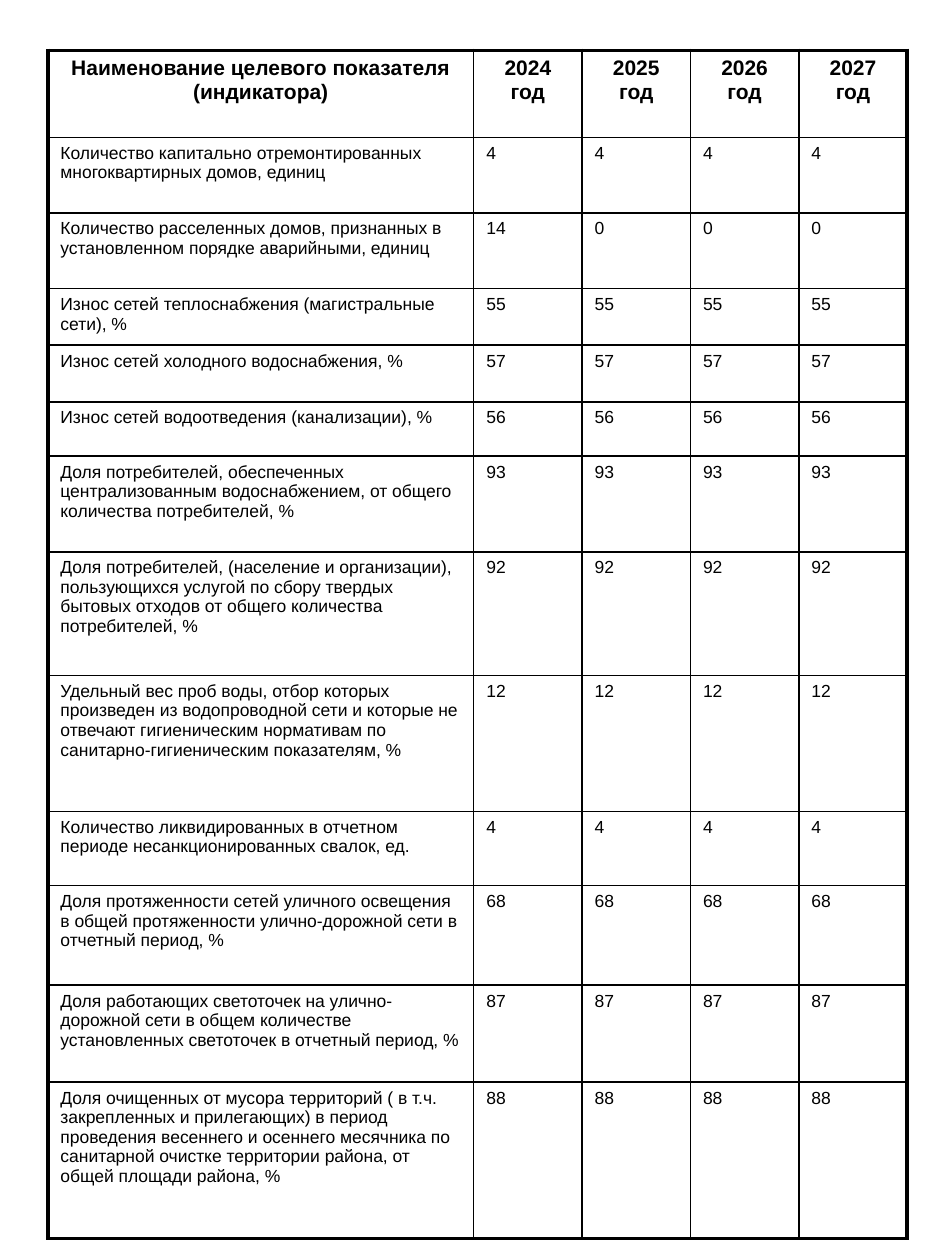
import pptx
import pptx.dml.color
import pptx.enum.text
import pptx.oxml.ns
import pptx.util
from lxml import etree

Inches = pptx.util.Inches
Pt = pptx.util.Pt
qn = pptx.oxml.ns.qn

YEARS = [2024, 2025, 2026, 2027]
HEADING = ["Наименование целевого показателя (индикатора)"] + [f"{year} год" for year in YEARS]
HEADING_HEIGHT = 0.69

INDICATORS = [
    (0.6, "Количество капитально отремонтированных многоквартирных домов, единиц", [4] * 4),
    (0.6, "Количество расселенных домов, признанных в установленном порядке аварийными, единиц", [14, 0, 0, 0]),
    (0.45, "Износ сетей теплоснабжения (магистральные сети), %", [55] * 4),
    (0.45, "Износ сетей холодного водоснабжения, %", [57] * 4),
    (0.43, "Износ сетей водоотведения (канализации), %", [56] * 4),
    (0.76, "Доля потребителей, обеспеченных централизованным водоснабжением, от общего количества потребителей, %", [93] * 4),
    (0.98, "Доля потребителей, (население и организации), пользующихся услугой по сбору твердых бытовых отходов от общего количества потребителей, %", [92] * 4),
    (1.08, "Удельный вес проб воды, отбор которых произведен из водопроводной сети и которые не отвечают гигиеническим нормативам по санитарно-гигиеническим показателям, %", [12] * 4),
    (0.59, "Количество ликвидированных в отчетном периоде несанкционированных свалок, ед.", [4] * 4),
    (0.79, "Доля протяженности сетей уличного освещения в общей протяженности улично-дорожной сети в отчетный период, %", [68] * 4),
    (0.77, "Доля работающих светоточек на улично-дорожной сети в общем количестве установленных светоточек в отчетный период, %", [87] * 4),
    (1.24, "Доля очищенных от мусора территорий ( в т.ч. закрепленных и прилегающих) в период проведения весеннего и осеннего месячника по санитарной очистке территории района, от общей площади района, %", [88] * 4),
]


def color(value):
    return pptx.dml.color.RGBColor.from_string(value)


class IndicatorSlide:
    font = "Arial"
    ink = "000000"
    inner_line = 1
    outer_line = 2.25

    def __init__(self, slide):
        self.slide = slide

    def table(self, left, top, widths, heights, rows):
        frame = self.slide.shapes.add_table(
            len(rows), len(widths), Inches(left), Inches(top),
            Inches(sum(widths)), Inches(sum(heights)))
        grid = frame.table
        grid.first_row = False
        grid.horz_banding = False
        for column, width in zip(grid.columns, widths):
            column.width = Inches(width)
        for row, height in zip(grid.rows, heights):
            row.height = Inches(height)
        last_row, last_column = len(rows) - 1, len(widths) - 1
        for r, texts in enumerate(rows):
            for c, text in enumerate(texts):
                cell = grid.cell(r, c)
                self.text(cell, text, heading=r == 0)
                outer = {"L": c == 0, "R": c == last_column, "T": r == 0, "B": r == last_row}
                self.borders(cell, outer)
                cell.fill.background()

    def text(self, cell, text, heading):
        cell.text = str(text)
        paragraph = cell.text_frame.paragraphs[0]
        paragraph.font.name = self.font
        paragraph.font.size = Pt(12 if heading else 10)
        paragraph.font.bold = heading
        paragraph.font.color.rgb = color(self.ink)
        align = pptx.enum.text.PP_ALIGN
        paragraph.alignment = align.CENTER if heading else align.LEFT
        paragraph.space_before = Pt(0)
        before = paragraph._p.pPr.find(qn("a:spcBef"))
        before.remove(before[0])
        etree.SubElement(before, qn("a:spcPct"), val="20000")

    def borders(self, cell, outer):
        properties = cell._tc.get_or_add_tcPr()
        for side, is_outer in outer.items():
            width = Pt(self.outer_line if is_outer else self.inner_line)
            line = etree.SubElement(properties, qn(f"a:ln{side}"), w=str(int(width)))
            fill = etree.SubElement(line, qn("a:solidFill"))
            etree.SubElement(fill, qn("a:srgbClr"), val=self.ink)


def main():
    presentation = pptx.Presentation()
    presentation.slide_width = Inches(7.5)
    presentation.slide_height = Inches(10)
    page = IndicatorSlide(presentation.slides.add_slide(presentation.slide_layouts[6]))
    page.table(
        0.38, 0.4,
        widths=[3.38] + [0.86] * len(YEARS),
        heights=[HEADING_HEIGHT] + [height for height, _, _ in INDICATORS],
        rows=[HEADING] + [[name, *values] for _, name, values in INDICATORS])
    presentation.save("out.pptx")


if __name__ == "__main__":
    main()
